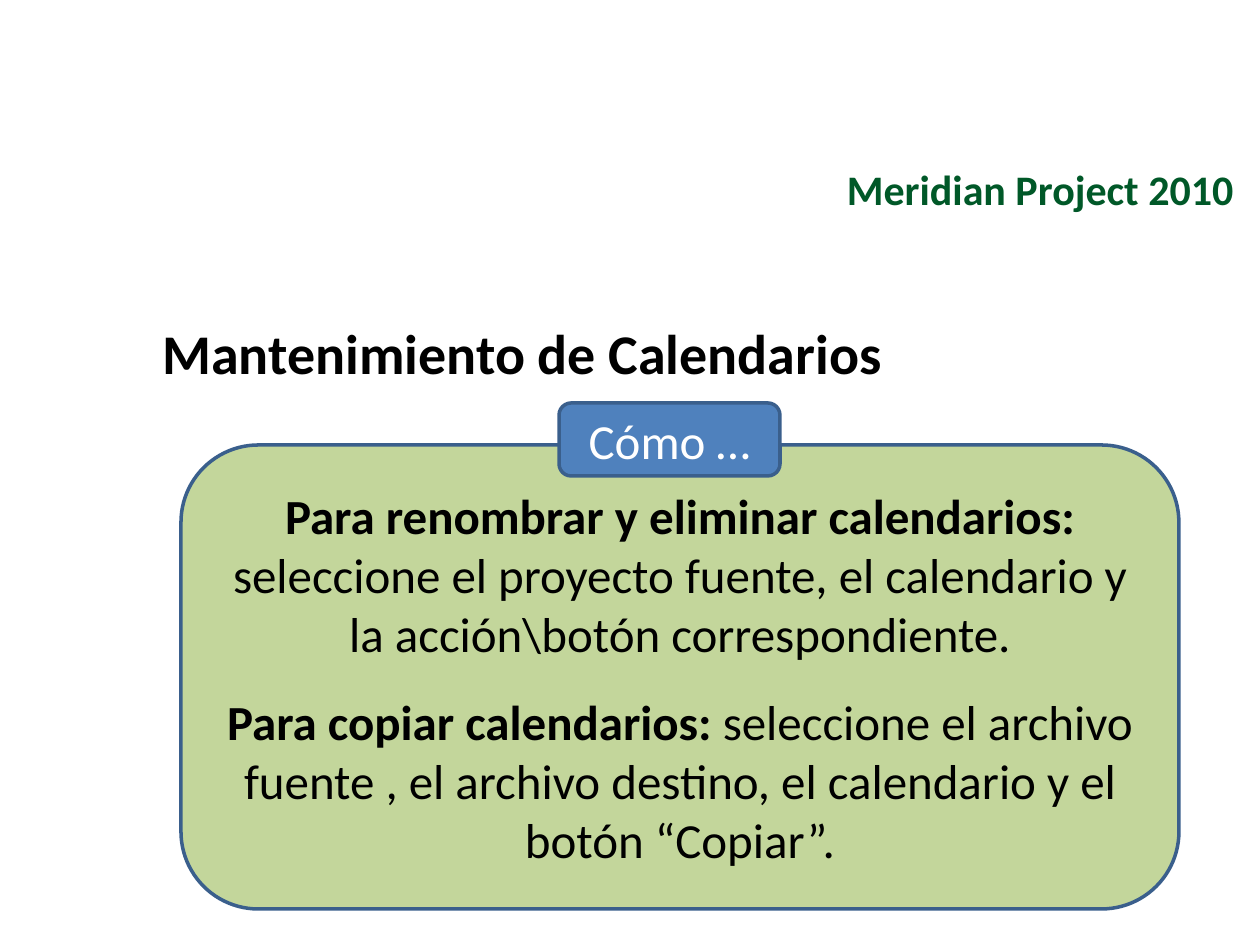
import pptx
import pptx.util
from pptx.dml.color import RGBColor
from pptx.enum.shapes import MSO_SHAPE
from pptx.enum.text import MSO_ANCHOR, PP_ALIGN

EMU_PER_PX = 914400 / 126
FONT = "Calibri"
GREEN = RGBColor(0x00, 0x58, 0x28)
BLACK = RGBColor(0x00, 0x00, 0x00)
WHITE = RGBColor(0xFF, 0xFF, 0xFF)
PANEL_FILL = RGBColor(0xC3, 0xD6, 0x9B)
BADGE_FILL = RGBColor(0x4F, 0x81, 0xBD)
OUTLINE = RGBColor(0x3A, 0x5F, 0x8C)

# Each paragraph is a list of (text, bold) runs.
HEADER = [[("Meridian Project 2010", True)]]
TITLE = [[("Mantenimiento de Calendarios", True)]]
BADGE = [[("Cómo …", False)]]
INSTRUCTIONS = [
    [("Para renombrar y eliminar calendarios: ", True),
     ("seleccione el proyecto fuente, el calendario y la acción\\botón "
      "correspondiente.", False)],
    [("Para copiar calendarios: ", True),
     ("seleccione el archivo fuente , el archivo destino, el calendario y el "
      "botón “Copiar”.", False)],
]

# Paragraphs, box in px (left, top, width, height), fill, text format
PARTS = [
    (HEADER, (679, 145, 567, 87), None,
     dict(size=24, color=GREEN, align=PP_ALIGN.RIGHT, anchor=MSO_ANCHOR.MIDDLE)),
    (TITLE, (150, 312, 1090, 84), None,
     dict(size=32, color=BLACK, align=PP_ALIGN.LEFT, anchor=MSO_ANCHOR.TOP)),
    (INSTRUCTIONS, (181, 445, 998, 464), PANEL_FILL,
     dict(size=28, color=BLACK, align=PP_ALIGN.CENTER, anchor=MSO_ANCHOR.MIDDLE)),
    (BADGE, (559, 403, 221, 73), BADGE_FILL,
     dict(size=28, color=WHITE, align=PP_ALIGN.CENTER, anchor=MSO_ANCHOR.MIDDLE)),
]
PARAGRAPH_GAP = 17


def px(length):
    return pptx.util.Emu(round(length * EMU_PER_PX))


def add_part(slide, box, fill):
    """Add a rounded panel, or a plain text box when there is no fill."""
    place = [px(length) for length in box]
    if fill is None:
        return slide.shapes.add_textbox(*place)
    panel = slide.shapes.add_shape(MSO_SHAPE.ROUNDED_RECTANGLE, *place)
    panel.shadow.inherit = False
    panel.fill.solid()
    panel.fill.fore_color.rgb = fill
    panel.line.color.rgb = OUTLINE
    panel.line.width = pptx.util.Pt(2)
    return panel


def write_text(frame, paragraphs, size, color, align, anchor):
    frame.word_wrap = True
    frame.vertical_anchor = anchor
    for index, runs in enumerate(paragraphs):
        paragraph = frame.add_paragraph() if index else frame.paragraphs[0]
        paragraph.alignment = align
        if index:
            paragraph.space_before = pptx.util.Pt(PARAGRAPH_GAP)
        for text, bold in runs:
            run = paragraph.add_run()
            run.text = text
            font_format = dict(name=FONT, size=pptx.util.Pt(size), bold=bold)
            for attribute, value in font_format.items():
                setattr(run.font, attribute, value)
            run.font.color.rgb = color


def main():
    presentation = pptx.Presentation()
    presentation.slide_width = px(1260)
    presentation.slide_height = px(945)
    slide = presentation.slides.add_slide(presentation.slide_layouts[6])
    for paragraphs, box, fill, text_format in PARTS:
        part = add_part(slide, box, fill)
        write_text(part.text_frame, paragraphs, **text_format)
    presentation.save("out.pptx")


if __name__ == "__main__":
    main()
